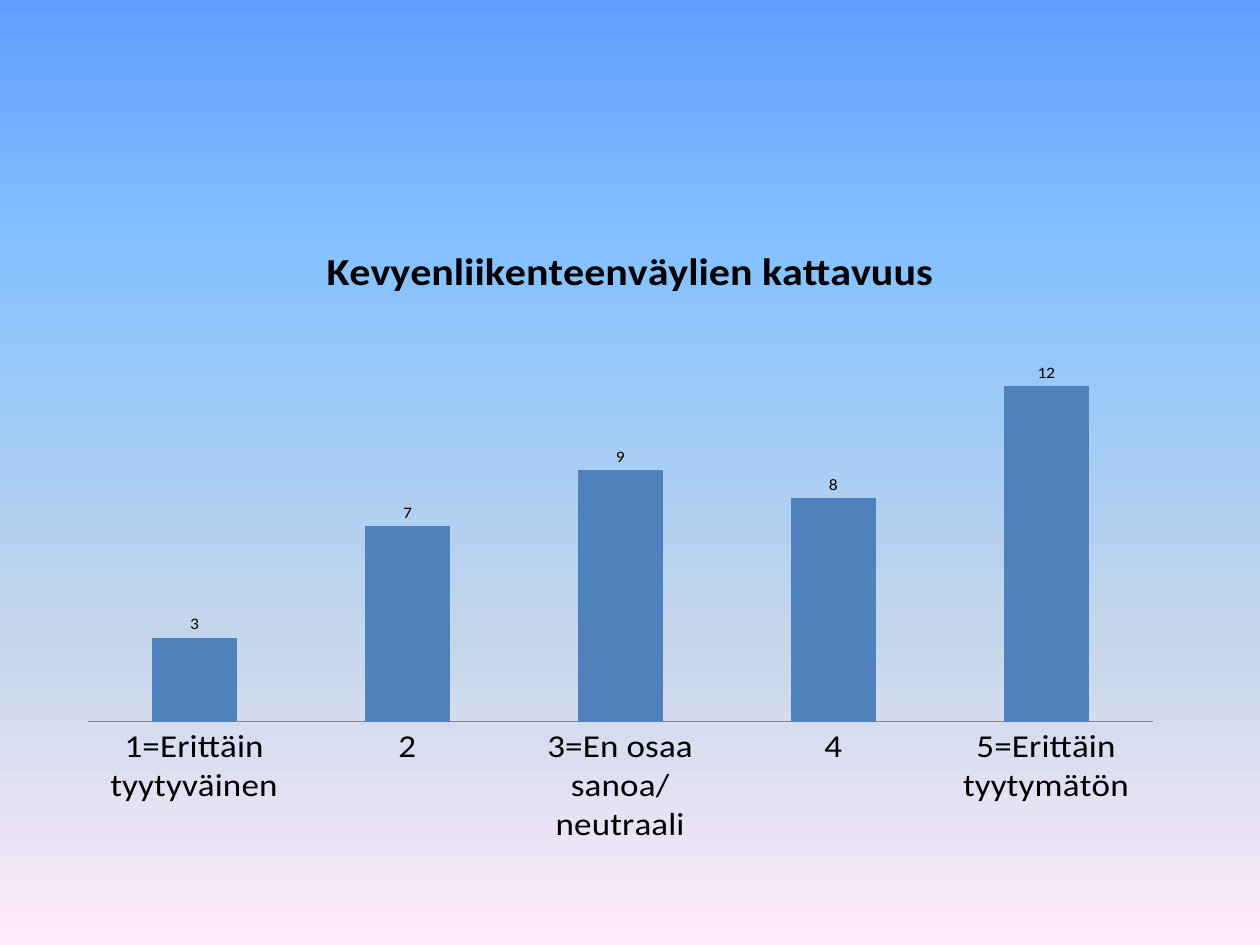
from copy import deepcopy

from pptx import Presentation
from pptx.chart.data import CategoryChartData as Data
from pptx.dml.color import RGBColor as RGB
from pptx.enum.chart import XL_CHART_TYPE as Kind
from pptx.enum.chart import XL_LABEL_POSITION as Spot
from pptx.enum.chart import XL_TICK_MARK as Tick
from pptx.oxml import parse_xml
from pptx.oxml.ns import nsdecls, qn
from pptx.util import Cm, Pt

BLACK = RGB(0, 0, 0)
BLUE = RGB(0x4F, 0x81, 0xBD)
GREY = RGB(0x86, 0x86, 0x86)
SKY = [
    (0, RGB(0x5E, 0x9E, 0xFF)),
    (0.27, RGB(0x85, 0xC2, 0xFF)),
    (0.67, RGB(0xC4, 0xD6, 0xEB)),
    (1, RGB(0xFF, 0xEB, 0xFA)),
]
VOTES = {
    "1=Erittäin tyytyväinen": 3,
    "2": 7,
    "3=En osaa sanoa/neutraali": 9,
    "4": 8,
    "5=Erittäin tyytymätön": 12,
}
PLOT = {"x": 0.022, "y": 0.194, "w": 0.939, "h": 0.69}


def paint_sky(slide):
    fill = slide.background.fill
    fill.gradient()
    fill.gradient_angle = 270
    stops = slide.element.find(".//" + qn("a:gsLst"))
    for _ in range(len(SKY) - len(stops)):
        stops.append(deepcopy(stops[0]))
    for stop, (place, tint) in zip(fill.gradient_stops, SKY):
        stop.position = place
        stop.color.rgb = tint


def set_plot(chart):
    area = chart.element.find(".//" + qn("c:plotArea"))
    for old in area.findall(qn("c:layout")):
        area.remove(old)
    sizes = "".join(f'<c:{key} val="{val}"/>' for key, val in PLOT.items())
    area.insert(0, parse_xml(
        f'<c:layout {nsdecls("c")}><c:manualLayout>'
        '<c:layoutTarget val="inner"/><c:xMode val="edge"/><c:yMode val="edge"/>'
        f'{sizes}</c:manualLayout></c:layout>'))


def add_votes(slide, left, top, width, height):
    data = Data()
    data.categories = list(VOTES)
    data.add_series("Series 1", list(VOTES.values()))
    chart = slide.shapes.add_chart(
        Kind.COLUMN_CLUSTERED, left, top, width, height, data).chart
    chart.font.name = "Calibri"
    chart.font.size = Pt(10)
    chart.font.color.rgb = BLACK
    chart.has_legend = False

    chart.has_title = True
    chart.chart_title.include_in_layout = False
    head = chart.chart_title.text_frame
    head.text = "Kevyenliikenteenväylien kattavuus"
    font = head.paragraphs[0].font
    font.name = "Calibri"
    font.size = Pt(24)
    font.bold = True
    font.color.rgb = BLACK

    axis = chart.category_axis
    axis.major_tick_mark = Tick.NONE
    axis.tick_labels.font.size = Pt(20)
    axis.format.line.color.rgb = GREY
    axis.format.line.width = Pt(0.75)
    chart.value_axis.visible = False
    chart.value_axis.has_major_gridlines = False
    chart.value_axis.minimum_scale = 0

    plot = chart.plots[0]
    plot.gap_width = 150
    plot.overlap = -25
    plot.vary_by_categories = False
    plot.has_data_labels = True
    plot.data_labels.show_value = True
    plot.data_labels.position = Spot.OUTSIDE_END
    bars = plot.series[0].format
    bars.fill.solid()
    bars.fill.fore_color.rgb = BLUE
    set_plot(chart)


def main():
    deck = Presentation()
    deck.slide_width, deck.slide_height = Cm(25.4), Cm(19.05)
    slide = deck.slides.add_slide(deck.slide_layouts[6])
    paint_sky(slide)
    add_votes(slide, Cm(1.27), Cm(4.45), Cm(22.86), Cm(12.57))
    deck.save("out.pptx")


if __name__ == "__main__":
    main()
